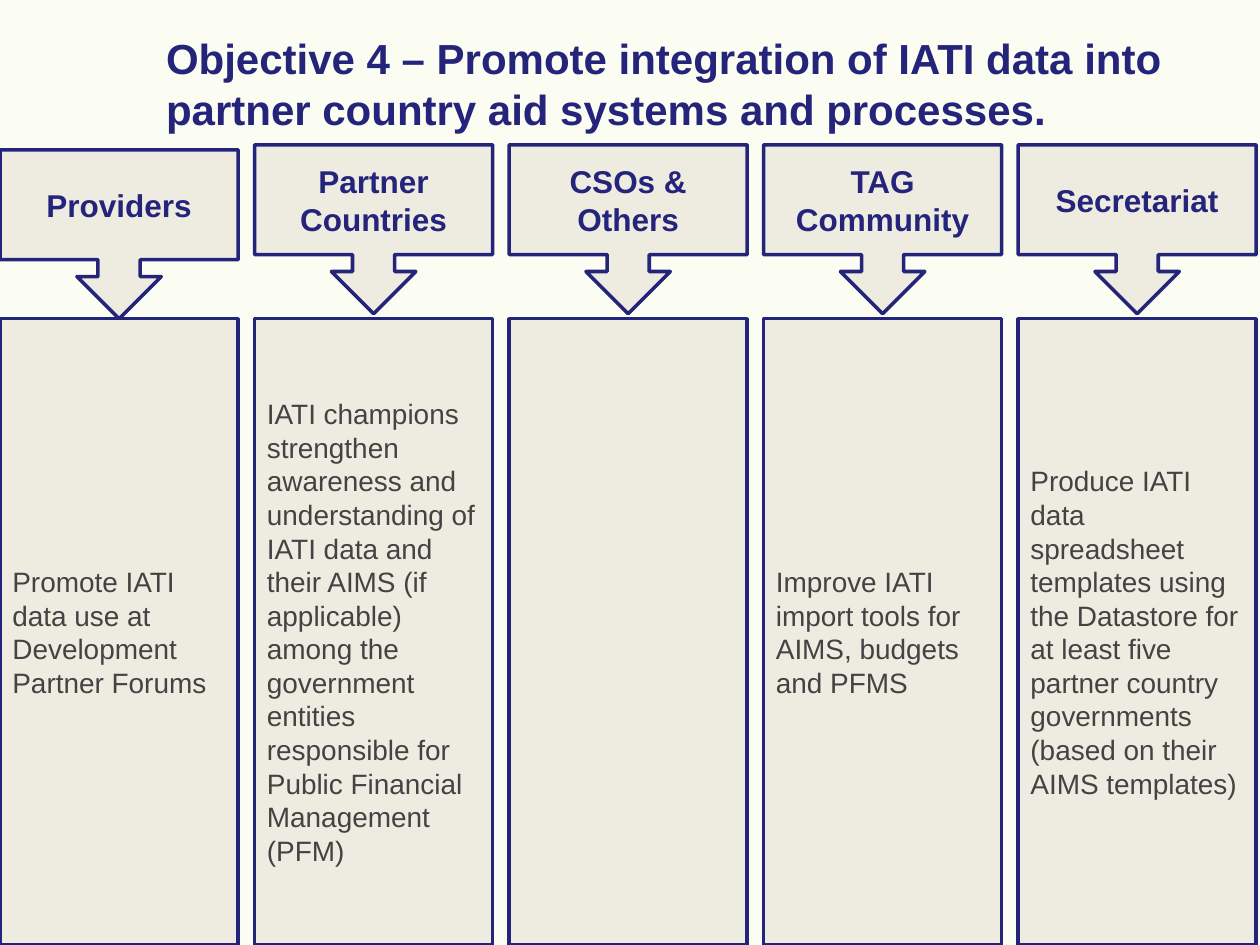
"""Build the Objective 4 slide: a callout and an action box for each group."""
from pptx import Presentation
from pptx.dml.color import RGBColor
from pptx.enum.shapes import MSO_SHAPE
from pptx.enum.text import MSO_ANCHOR, PP_ALIGN
from pptx.util import Inches, Pt

CALLOUT, RECT = MSO_SHAPE.DOWN_ARROW_CALLOUT, MSO_SHAPE.RECTANGLE
LEFT, CENTER = PP_ALIGN.LEFT, PP_ALIGN.CENTER
TOP, MIDDLE = MSO_ANCHOR.TOP, MSO_ANCHOR.MIDDLE
NAVY, SAND, GREY, CREAM = "25247B", "EEECE1", "434343", "FBFCF2"

TITLE = ("Objective 4 – Promote integration of IATI data into "
         "partner country aid systems and processes.")
GROUPS = [
    ("Providers", 1.19, "Promote IATI data use at Development Partner Forums"),
    ("Partner Countries", 1.15,
     "IATI champions strengthen awareness and understanding of IATI data "
     "and their AIMS (if applicable) among the government entities "
     "responsible for Public Financial Management (PFM)"),
    ("CSOs & Others", 1.15, ""),
    ("TAG Community", 1.15,
     "Improve IATI import tools for AIMS, budgets and PFMS"),
    ("Secretariat", 1.15,
     "Produce IATI data spreadsheet templates using the Datastore for at "
     "least five partner country governments (based on their AIMS templates)"),
]
STEP, WIDTH = 2.02, 1.89
HEAD_H, BODY_TOP, BODY_H = 1.34, 2.53, 4.97

TITLE_FONT = {"name": "Arial", "size": Pt(24), "bold": True}
HEAD_FONT = {"name": "Arial", "size": Pt(18), "bold": True}
BODY_FONT = {"name": "Arial", "size": Pt(16), "bold": False}


def color(code):
    """Turn a hex string into a colour."""
    return RGBColor.from_string(code)


def write(shape, text, font, hue, align, anchor):
    """Put formatted text into a shape."""
    frame = shape.text_frame
    frame.word_wrap = True
    frame.vertical_anchor = anchor
    para = frame.paragraphs[0]
    para.alignment = align
    run = para.add_run()
    run.text = text
    for key, value in font.items():
        setattr(run.font, key, value)
    run.font.color.rgb = color(hue)


def add_box(slide, kind, *place):
    """Add a sand box with a navy outline."""
    box = slide.shapes.add_shape(kind, *map(Inches, place))
    box.shadow.inherit = False
    box.fill.solid()
    box.fill.fore_color.rgb = color(SAND)
    box.line.color.rgb = color(NAVY)
    box.line.width = Pt(2)
    return box


def main():
    """Build and save the slide."""
    deck = Presentation()
    deck.slide_width, deck.slide_height = Inches(10), Inches(7.5)
    slide = deck.slides.add_slide(deck.slide_layouts[6])
    back = slide.background.fill
    back.solid()
    back.fore_color.rgb = color(CREAM)

    title = slide.shapes.add_textbox(*map(Inches, (1.22, 0.21, 8.4, 0.91)))
    write(title, TITLE, TITLE_FONT, NAVY, LEFT, TOP)

    for i, (name, top, task) in enumerate(GROUPS):
        left = i * STEP
        head = add_box(slide, CALLOUT, left, top, WIDTH, HEAD_H)
        write(head, name, HEAD_FONT, NAVY, CENTER, MIDDLE)
        body = add_box(slide, RECT, left, BODY_TOP, WIDTH, BODY_H)
        if task:
            write(body, task, BODY_FONT, GREY, LEFT, MIDDLE)

    deck.save("out.pptx")


if __name__ == "__main__":
    main()
